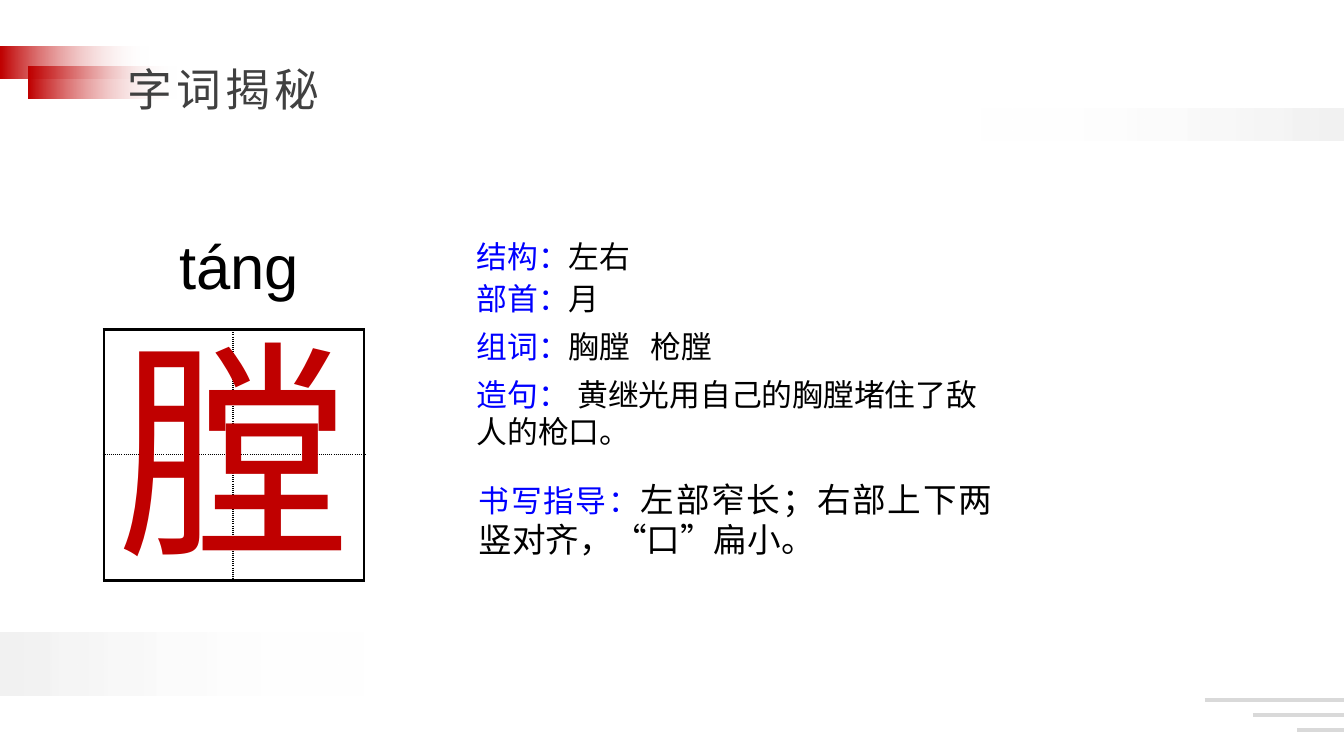
from dataclasses import dataclass
from typing import Optional

from lxml.etree import SubElement
from pptx import Presentation
from pptx.dml.color import RGBColor
from pptx.enum.shapes import MSO_CONNECTOR, MSO_SHAPE
from pptx.enum.text import MSO_AUTO_SIZE, PP_ALIGN
from pptx.oxml.ns import qn
from pptx.slide import Slide
from pptx.util import Pt

RED = RGBColor(0xC0, 0x00, 0x00)
BLUE = RGBColor(0x00, 0x00, 0xFF)
BLACK = RGBColor(0x00, 0x00, 0x00)
WHITE = RGBColor(0xFF, 0xFF, 0xFF)
DARK_GREY = RGBColor(0x40, 0x40, 0x40)
LINE_GREY = RGBColor(0xD9, 0xD9, 0xD9)
PALE_GREY = RGBColor(0xF2, 0xF2, 0xF2)

SLIDE_W, SLIDE_H = 960, 540


@dataclass
class FadingBar:
    left: float
    top: float
    width: float
    height: float
    color: RGBColor
    flipped: bool = False


@dataclass
class Span:
    text: str
    size: float
    color: RGBColor = BLACK
    font: str = "Arial"
    spacing: int = 0


@dataclass
class TextItem:
    left: float
    top: float
    width: float
    height: float
    spans: list[Span]
    wrap: bool = True
    align: Optional[PP_ALIGN] = None
    line_spacing: Optional[float] = None
    fill: Optional[RGBColor] = None
    tab_stop: Optional[float] = None


def labelled(label: str, text: str, size: float = 22) -> list[Span]:
    """Return a blue label followed by its black explanation."""
    return [Span(label, 22, BLUE), Span(text, size)]


BARS = [
    FadingBar(0, 33, 106, 23, RED),
    FadingBar(20, 47.3, 106, 23, RED),
    FadingBar(0, 451.5, 260.5, 45.5, PALE_GREY),
    FadingBar(699.5, 77.6, 260.5, 23, PALE_GREY, flipped=True),
]
CORNER_LINES = [(860.4, 500.2), (895, 510.7), (926.6, 521.2)]
TEXTS = [
    TextItem(84.2, 21.6, 200, 60.5, [Span("字词揭秘", 32, DARK_GREY, "Karla", 300)],
             line_spacing=1.5),
    TextItem(334.8, 338.4, 380.9, 65.5,
             labelled("书写指导：", "左部窄长；右部上下两竖对齐，“口”扁小。", 24),
             align=PP_ALIGN.JUSTIFY),
    TextItem(333.4, 166.3, 184.3, 33.8, labelled("结构：", "左右"), fill=WHITE),
    TextItem(333.4, 230.4, 321, 33.8, labelled("组词：", "胸膛\t枪膛"), tab_stop=124.5),
    TextItem(333.4, 265, 386.6, 60.5, labelled("造句：", "\t黄继光用自己的胸膛堵住了敌人的枪口。")),
    TextItem(333.4, 196.6, 229, 33.8, labelled("部首：", "月")),
]
CHARACTER = TextItem(77.8, 215.3, 182.2, 208, [Span("膛", 166, RED)], wrap=False)
PINYIN = TextItem(121, 159.1, 100.8, 60.5, [Span("táng", 44)], wrap=False)


def add_bar(s: Slide, bar: FadingBar) -> None:
    sp = s.shapes.add_shape(MSO_SHAPE.RECTANGLE, Pt(bar.left), Pt(bar.top),
                            Pt(bar.width), Pt(bar.height))
    sp.shadow.inherit = False
    sp.line.fill.background()
    sp.fill.gradient()
    sp.fill.gradient_angle = 0
    start, end = sp.fill.gradient_stops
    start.color.rgb, end.color.rgb = bar.color, WHITE
    clear = list(sp._element.iter(qn("a:srgbClr")))[-1]
    SubElement(clear, qn("a:alpha"), val="0")
    if bar.flipped:
        sp._element.spPr.find(qn("a:xfrm")).set("flipH", "1")


def add_corner_line(s: Slide, left: float, y: float) -> None:
    line = s.shapes.add_connector(MSO_CONNECTOR.STRAIGHT, Pt(left), Pt(y), Pt(SLIDE_W), Pt(y))
    line.line.color.rgb = LINE_GREY
    line.line.width = Pt(2.75)
    SubElement(line._element.spPr, qn("a:effectLst"))


def add_text(s: Slide, item: TextItem) -> None:
    sp = s.shapes.add_textbox(Pt(item.left), Pt(item.top), Pt(item.width), Pt(item.height))
    if item.fill is not None:
        sp.fill.solid()
        sp.fill.fore_color.rgb = item.fill
    tf = sp.text_frame
    tf.word_wrap = item.wrap
    tf.auto_size = MSO_AUTO_SIZE.SHAPE_TO_FIT_TEXT
    p = tf.paragraphs[0]
    p.alignment = item.align
    p.line_spacing = item.line_spacing
    if item.tab_stop is not None:
        tabs = SubElement(p._p.get_or_add_pPr(), qn("a:tabLst"))
        SubElement(tabs, qn("a:tab"), pos=str(Pt(item.tab_stop)), algn="l")
    for span in item.spans:
        r = p.add_run()
        r.text = span.text
        r.font.name = span.font
        r.font.size = Pt(span.size)
        r.font.color.rgb = span.color
        if span.spacing:
            r._r.get_or_add_rPr().set("spc", str(span.spacing))


def add_writing_grid(s: Slide) -> None:
    """Draw the square with a solid outline and a dotted cross inside."""
    table = s.shapes.add_table(2, 2, Pt(74.2), Pt(235.4), Pt(185.8), Pt(179.3)).table
    table.first_row = table.horz_banding = False
    for column, width in zip(table.columns, (92.2, 93.6)):
        column.width = Pt(width)
    for row, height in zip(table.rows, (89.3, 90)):
        row.height = Pt(height)
    for i in range(2):
        for j in range(2):
            cell = table.cell(i, j)
            outer = {"lnL": j == 0, "lnR": j == 1, "lnT": i == 0, "lnB": i == 1}
            for side, solid in outer.items():
                ln = SubElement(cell._tc.get_or_add_tcPr(), qn(f"a:{side}"),
                                w=str(Pt(2.25 if solid else 1.5)))
                SubElement(SubElement(ln, qn("a:solidFill")), qn("a:srgbClr"), val=str(BLACK))
                SubElement(ln, qn("a:prstDash"), val="solid" if solid else "sysDot")
            cell.fill.background()


def main() -> None:
    prs = Presentation()
    prs.slide_width, prs.slide_height = Pt(SLIDE_W), Pt(SLIDE_H)
    s = prs.slides.add_slide(prs.slide_layouts[6])
    for bar in BARS:
        add_bar(s, bar)
    for left, y in CORNER_LINES:
        add_corner_line(s, left, y)
    for item in TEXTS:
        add_text(s, item)
    add_writing_grid(s)
    add_text(s, CHARACTER)
    add_text(s, PINYIN)
    prs.save("out.pptx")


if __name__ == "__main__":
    main()
